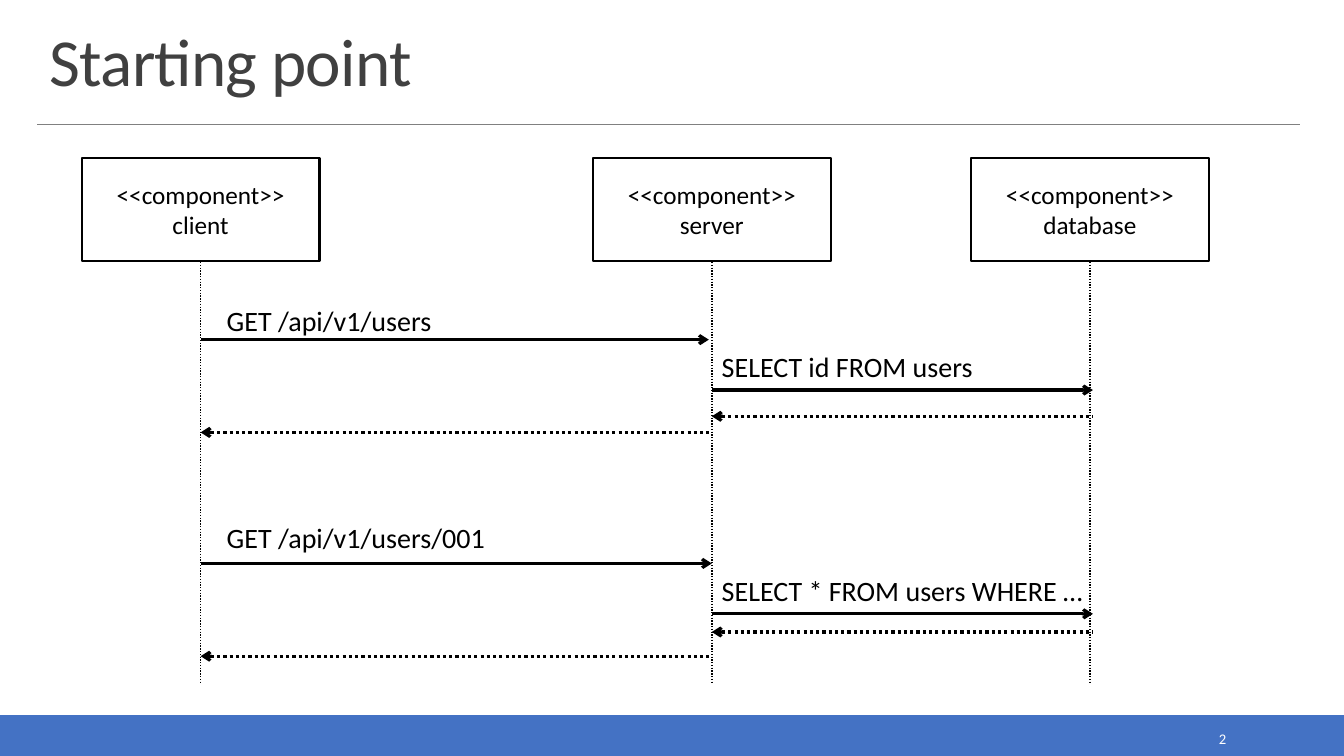
from pptx import Presentation
from pptx.dml.color import RGBColor
from pptx.enum.dml import MSO_LINE
from pptx.enum.shapes import MSO_CONNECTOR, MSO_SHAPE
from pptx.enum.text import MSO_ANCHOR, MSO_AUTO_SIZE, PP_ALIGN
from pptx.oxml.ns import qn
from pptx.util import Inches, Pt
from lxml import etree

BLACK = RGBColor(0x00, 0x00, 0x00)
WHITE = RGBColor(0xFF, 0xFF, 0xFF)
BLUE = RGBColor(0x44, 0x72, 0xC4)
GRAY = RGBColor(0x80, 0x80, 0x80)
TITLE_GRAY = RGBColor(0x40, 0x40, 0x40)

CLIENT, SERVER, DATABASE = 1.99, 7.06, 10.81  # lifeline positions
DB_END = 10.84
BOX_W, BOX_H, BOX_TOP = 2.36, 1.02, 1.57

prs = Presentation()
prs.slide_width, prs.slide_height = Inches(13.33), Inches(7.5)
s = prs.slides.add_slide(prs.slide_layouts[5])


def add_line(x1, y1, x2, y2, width, color=BLACK, dotted=False, arrow=None):
    """Draw a line; arrow is headEnd (at the start) or tailEnd (at the end)."""
    c = s.shapes.add_connector(MSO_CONNECTOR.STRAIGHT, Inches(x1), Inches(y1),
                               Inches(x2), Inches(y2))
    c.line.color.rgb = color
    c.line.width = Pt(width)
    if dotted:
        c.line.dash_style = MSO_LINE.ROUND_DOT
    if arrow:
        etree.SubElement(c.line._get_or_add_ln(), qn(f"a:{arrow}"), type="arrow")
    etree.SubElement(c._element.spPr, qn("a:effectLst"))


def write(sp, lines, size, color=BLACK, align=PP_ALIGN.LEFT, anchor=MSO_ANCHOR.TOP):
    tf = sp.text_frame
    tf.word_wrap = True
    tf.vertical_anchor = anchor
    tf.text = lines
    for p in tf.paragraphs:
        p.alignment = align
        p.font.name = "Calibri"
        p.font.size = Pt(size)
        p.font.color.rgb = color


# Footer bar and title rule
bar = s.shapes.add_shape(MSO_SHAPE.RECTANGLE, 0, Inches(7.1), prs.slide_width, Inches(0.4))
bar.shadow.inherit = False
bar.fill.solid()
bar.fill.fore_color.rgb = BLUE
bar.line.color.rgb = BLUE
bar.line.width = Pt(1.25)
add_line(0.37, 1.23, 12.89, 1.23, 0.5, GRAY)

# Title
title = s.shapes.title
title.left, title.top, title.width, title.height = map(Inches, (0.39, 0.2, 12.52, 0.84))
write(title, "Starting point", 48, TITLE_GRAY, anchor=MSO_ANCHOR.BOTTOM)
title.text_frame.auto_size = MSO_AUTO_SIZE.NONE
p = title.text_frame.paragraphs[0]
p.line_spacing = 0.85
p.runs[0].font._element.set("spc", "-50")

# Slide number
number = s.shapes.add_textbox(Inches(10.83), Inches(7.19), Inches(1.43), Inches(0.28))
write(number, "2", 10.5, WHITE, PP_ALIGN.RIGHT, MSO_ANCHOR.MIDDLE)

# Components and their lifelines
for name, x in (("client", CLIENT), ("server", SERVER), ("database", DATABASE)):
    box = s.shapes.add_shape(MSO_SHAPE.RECTANGLE, Inches(x - BOX_W / 2), Inches(BOX_TOP),
                             Inches(BOX_W), Inches(BOX_H))
    box.shadow.inherit = False
    box.fill.background()
    box.line.color.rgb = BLACK
    box.line.width = Pt(1.5)
    write(box, f"<<component>>\n{name}", 18, align=PP_ALIGN.CENTER, anchor=MSO_ANCHOR.MIDDLE)
    add_line(x, 2.6, x, 6.77, 1, dotted=True)

# Requests
for x1, x2, y in ((CLIENT, 7.03, 3.37), (SERVER, DB_END, 3.87),
                  (CLIENT, SERVER, 5.59), (SERVER, DB_END, 6.09)):
    add_line(x1, y, x2, y, 2.25, arrow="tailEnd")

# Responses
for x1, x2, y in ((SERVER, DB_END, 4.13), (CLIENT, 7.03, 4.29),
                  (SERVER, DB_END, 6.27), (CLIENT, 7.03, 6.51)):
    add_line(x1, y, x2, y, 2.25, dotted=True, arrow="headEnd")

# Request labels
for text, x, y, w in (("GET /api/v1/users", 2.15, 2.96, 2.44),
                      ("SELECT id FROM users", SERVER, 3.42, 3.46),
                      ("GET /api/v1/users/001", 2.15, 5.11, 3.46),
                      ("SELECT * FROM users WHERE …", SERVER, 5.64, 3.78)):
    label = s.shapes.add_textbox(Inches(x), Inches(y), Inches(w), Inches(0.44))
    write(label, text, 20)
    label.text_frame.auto_size = MSO_AUTO_SIZE.SHAPE_TO_FIT_TEXT

prs.save("out.pptx")
